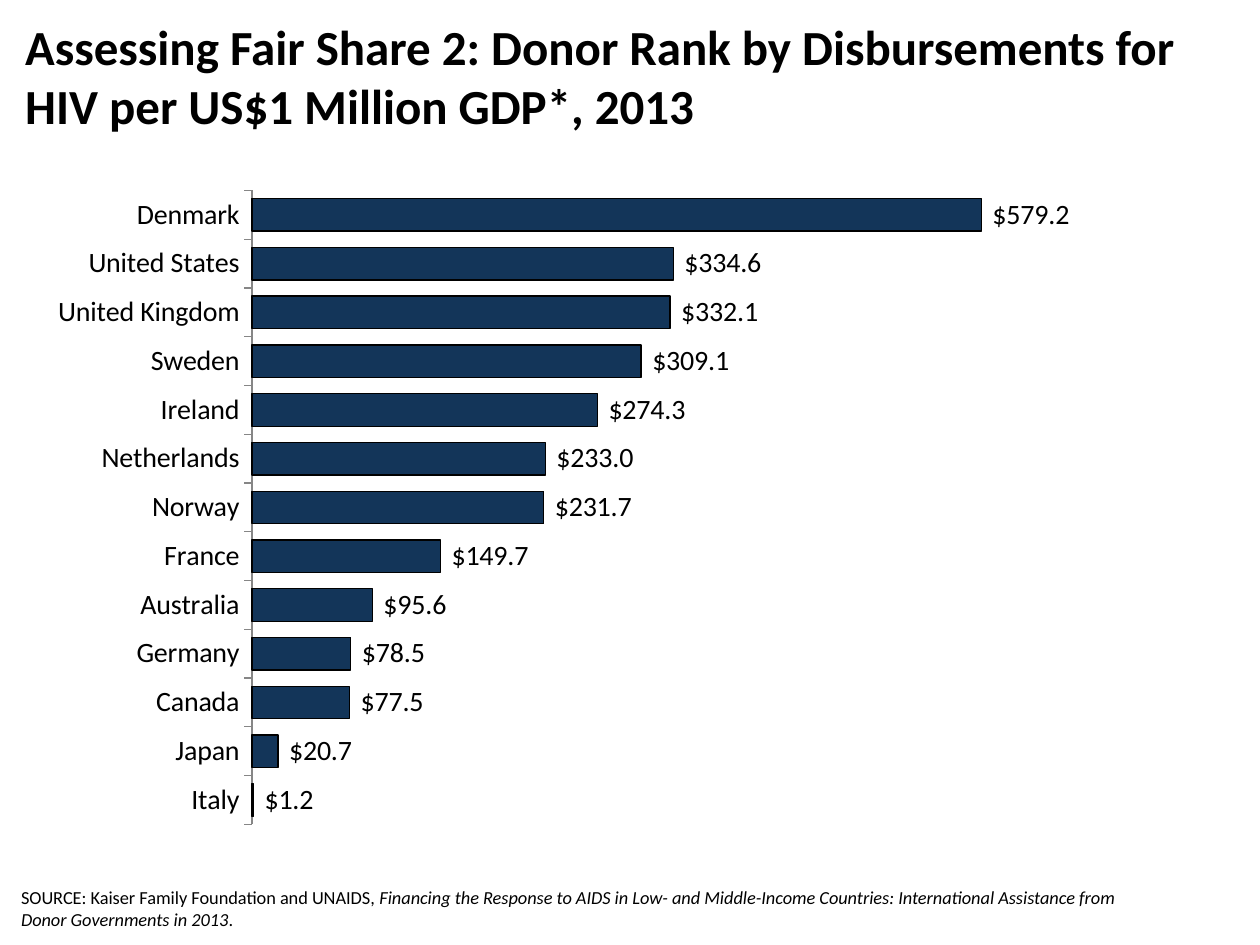
from dataclasses import dataclass

from lxml import etree
from pptx import Presentation
from pptx.chart.data import CategoryChartData
from pptx.dml.color import RGBColor
from pptx.enum.chart import XL_CHART_TYPE, XL_LABEL_POSITION, XL_TICK_MARK
from pptx.enum.text import MSO_ANCHOR, MSO_AUTO_SIZE, PP_ALIGN
from pptx.oxml.ns import qn
from pptx.util import Pt


@dataclass(frozen=True)
class Theme:
    font: str = "Calibri"
    ink: RGBColor = RGBColor(0x00, 0x00, 0x00)
    bar: RGBColor = RGBColor(0x13, 0x35, 0x59)
    axis: RGBColor = RGBColor(0x86, 0x86, 0x86)
    title_size: Pt = Pt(28)
    chart_size: Pt = Pt(18)
    label_size: Pt = Pt(16)
    source_size: Pt = Pt(10.5)


THEME = Theme()
DOLLARS = '_("$"#,##0.0_)'

# Bars run from the bottom of the chart to the top
DISBURSEMENTS = {
    "Italy": 1.2,
    "Japan": 20.7,
    "Canada": 77.5,
    "Germany": 78.5,
    "Australia": 95.6,
    "France": 149.7,
    "Norway": 231.7,
    "Netherlands": 233.0,
    "Ireland": 274.3,
    "Sweden": 309.1,
    "United Kingdom": 332.1,
    "United States": 334.6,
    "Denmark": 579.2,
}


def style_font(font, size):
    font.name = THEME.font
    font.size = size
    font.color.rgb = THEME.ink


def add_run(paragraph, text, size, bold=False, italic=False):
    run = paragraph.add_run()
    run.text = text
    style_font(run.font, size)
    run.font.bold = bold
    run.font.italic = italic


def set_title(slide, text):
    title = slide.shapes.title
    title.left, title.top, title.width, title.height = Pt(7.2), Pt(7.2), Pt(705.6), Pt(72)
    frame = title.text_frame
    frame.word_wrap = True
    frame.auto_size = MSO_AUTO_SIZE.NONE
    frame.vertical_anchor = MSO_ANCHOR.MIDDLE
    heading = frame.paragraphs[0]
    heading.alignment = PP_ALIGN.LEFT
    add_run(heading, text, THEME.title_size, bold=True)


def set_plot_layout(chart, **fractions):
    """Fix the inner plot area, as fractions of the chart frame."""
    plot_area = chart.plots[0]._element.getparent()
    for old_layout in plot_area.findall(qn("c:layout")):
        plot_area.remove(old_layout)
    layout = etree.Element(qn("c:layout"))
    manual = etree.SubElement(layout, qn("c:manualLayout"))
    settings = {"layoutTarget": "inner", "xMode": "edge", "yMode": "edge", **fractions}
    for tag, value in settings.items():
        etree.SubElement(manual, qn(f"c:{tag}")).set("val", str(value))
    plot_area.insert(0, layout)


def add_donor_chart(slide):
    donors = CategoryChartData(number_format=DOLLARS)
    donors.categories = list(DISBURSEMENTS)
    donors.add_series("Series 1", list(DISBURSEMENTS.values()))
    chart = slide.shapes.add_chart(
        XL_CHART_TYPE.BAR_CLUSTERED, Pt(0), Pt(96), Pt(705.6), Pt(390), donors
    ).chart
    chart.has_title = False
    chart.has_legend = False
    style_font(chart.font, THEME.chart_size)
    set_plot_layout(chart, x=0.204, y=0.033, w=0.714, h=0.929)

    # Axes
    countries = chart.category_axis
    countries.major_tick_mark = XL_TICK_MARK.OUTSIDE
    countries.has_major_gridlines = False
    countries.format.line.color.rgb = THEME.axis
    countries.format.line.width = Pt(0.75)
    style_font(countries.tick_labels.font, THEME.label_size)
    amounts = chart.value_axis
    amounts.minimum_scale = 0
    amounts.maximum_scale = 700
    amounts.has_major_gridlines = False
    amounts.visible = False

    # Bars and their values
    plot = chart.plots[0]
    plot.gap_width = 50
    plot.vary_by_categories = False
    bars = plot.series[0]
    bars.format.fill.solid()
    bars.format.fill.fore_color.rgb = THEME.bar
    bars.format.line.color.rgb = THEME.ink
    bars.format.line.width = Pt(0.75)
    values = bars.data_labels
    values.show_value = True
    values.number_format = DOLLARS
    values.number_format_is_linked = False
    values.position = XL_LABEL_POSITION.OUTSIDE_END
    style_font(values.font, THEME.label_size)


def add_source(slide, *parts):
    source = slide.shapes.add_textbox(Pt(5), Pt(491.8), Pt(655.2), Pt(43.2))
    frame = source.text_frame
    frame.word_wrap = True
    frame.vertical_anchor = MSO_ANCHOR.BOTTOM
    for text, italic in parts:
        add_run(frame.paragraphs[0], text, THEME.source_size, italic=italic)


def main():
    deck = Presentation()
    deck.slide_width, deck.slide_height = Pt(720), Pt(540)
    slide = deck.slides.add_slide(deck.slide_layouts.get_by_name("Title Only"))

    add_donor_chart(slide)
    set_title(
        slide,
        "Assessing Fair Share 2: Donor Rank by Disbursements for "
        "HIV per US$1 Million GDP*, 2013",
    )
    add_source(
        slide,
        ("SOURCE: Kaiser Family Foundation and UNAIDS, ", False),
        ("Financing the Response to AIDS in Low- and Middle-Income Countries: "
         "International Assistance from Donor Governments in 2013", True),
        (".", False),
    )
    deck.save("out.pptx")


if __name__ == "__main__":
    main()
